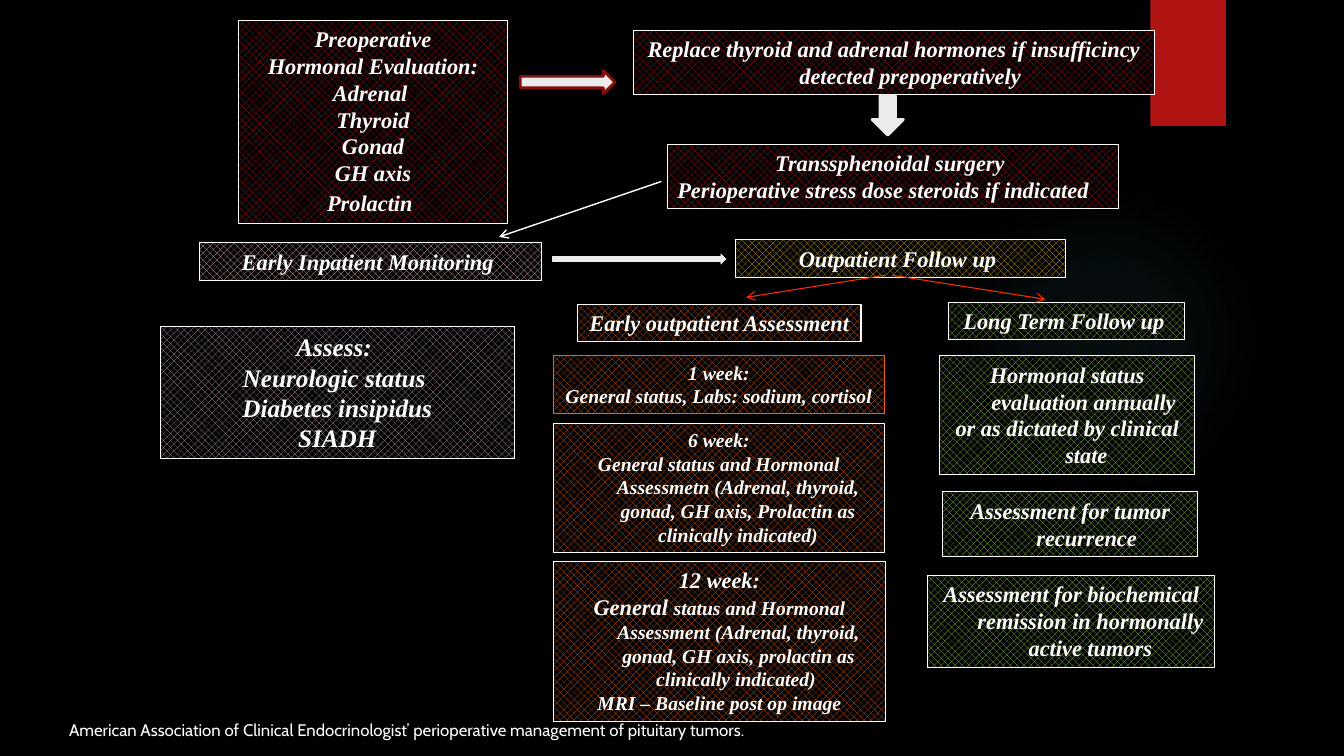
from lxml import etree
from pptx import Presentation
from pptx.dml.color import RGBColor
from pptx.enum.dml import MSO_PATTERN
from pptx.enum.shapes import MSO_CONNECTOR, MSO_SHAPE
from pptx.enum.text import MSO_ANCHOR, PP_ALIGN
from pptx.oxml import parse_xml
from pptx.oxml.ns import nsdecls, qn
from pptx.util import Inches, Pt

BLACK = RGBColor(0x00, 0x00, 0x00)
WHITE = RGBColor(0xFF, 0xFF, 0xFF)
RED = RGBColor(0xB0, 0x15, 0x13)
DARK_RED = RGBColor(0x84, 0x10, 0x0E)
BRIGHT_RED = RGBColor(0xFF, 0x2E, 0x00)
PALE_GRAY = RGBColor(0xEB, 0xEB, 0xEB)
PINK = RGBColor(0xF9, 0xC7, 0xC6)
GOLD = RGBColor(0xE6, 0xB7, 0x29)
ORANGE = RGBColor(0xEA, 0x63, 0x12)
GREEN = RGBColor(0x92, 0xD0, 0x50)
MAUVE = RGBColor(0xC5, 0x9E, 0xC3)

RECT, OVAL = MSO_SHAPE.RECTANGLE, MSO_SHAPE.OVAL
RIGHT_ARROW, DOWN_ARROW = MSO_SHAPE.RIGHT_ARROW, MSO_SHAPE.DOWN_ARROW
HATCH = MSO_PATTERN.PERCENT_50
STRAIGHT = MSO_CONNECTOR.STRAIGHT
CENTER, JUSTIFY, LEFT = PP_ALIGN.CENTER, PP_ALIGN.JUSTIFY, PP_ALIGN.LEFT
TOP = MSO_ANCHOR.TOP

SERIF, SANS = "Times New Roman", "Cabin"
HANGING = Inches(0.38)

# Each box: position, hatch colour, size, paragraphs.
# A paragraph is a string or a list of (text, size) runs.
STEPS = [
    ((2.37, 0.2, 2.66, 2.02), RED, 16,
     ["Preoperative", "Hormonal Evaluation:", "Adrenal ", "Thyroid", "Gonad",
      "GH axis", [("Prolactin", 16), (" ", 18)]]),
    ((6.28, 0.3, 5.17, 0.64), RED, 16,
     ["Replace thyroid and adrenal hormones if insufficincy "
      "detected prepoperatively "]),
    ((7.29, 2.38, 3.28, 0.37), GOLD, 16, ["Outpatient Follow up "]),
    ((1.98, 2.41, 3.39, 0.37), PINK, 16, ["Early Inpatient Monitoring "]),
    ((1.59, 3.24, 3.51, 1.31), MAUVE, 18,
     ["Assess: ", "Neurologic status ", "Diabetes insipidus", "SIADH"]),
    # Early outpatient column
    ((5.73, 3.02, 2.81, 0.37), ORANGE, 16, ["Early outpatient Assessment"]),
    ((5.49, 4.2, 3.28, 1.28), ORANGE, 14,
     ["6 week:",
      "General status and Hormonal Assessmetn (Adrenal, thyroid, gonad, "
      "GH axis, Prolactin as clinically indicated)"]),
    ((5.49, 5.57, 3.29, 1.59), ORANGE, 14,
     [[("12 week:", 16)],
      [("General ", 16),
       ("status and Hormonal Assessment (Adrenal, thyroid, gonad, GH axis, "
        "prolactin as clinically indicated) ", 14)],
      "MRI – Baseline post op image"]),
    # Long term column
    ((9.41, 3, 2.34, 0.37), GREEN, 16, ["Long Term Follow up "]),
    ((9.32, 3.53, 2.53, 1.18), GREEN, 16,
     ["Hormonal status evaluation annually ",
      "or as dictated by clinical state"]),
    ((9.35, 4.88, 2.53, 0.64), GREEN, 16, ["Assessment for tumor recurrence "]),
    ((9.2, 5.71, 2.85, 0.91), GREEN, 16,
     ["Assessment for biochemical remission in hormonally active tumors"]),
]


def write_text(shape, paragraphs, size, font=SERIF, strong=True, aligns=None):
    frame = shape.text_frame
    frame.word_wrap = True
    frame.vertical_anchor = TOP
    for index, content in enumerate(paragraphs):
        paragraph = frame.paragraphs[0] if index == 0 else frame.add_paragraph()
        paragraph.alignment = aligns[index] if aligns else CENTER
        properties = paragraph._p.get_or_add_pPr()
        properties.set("marL", str(HANGING))
        properties.set("indent", str(-HANGING))
        runs = [(content, size)] if isinstance(content, str) else content
        for text, run_size in runs:
            run = paragraph.add_run()
            run.text = text
            run.font.name = font
            run.font.size = Pt(run_size)
            run.font.bold = run.font.italic = strong
            run.font.color.rgb = WHITE


def add_plain(slide, kind, position, fill=None, line=None, width=0.75):
    shape = slide.shapes.add_shape(kind, *map(Inches, position))
    shape.shadow.inherit = False
    if fill is not None:
        shape.fill.solid()
        shape.fill.fore_color.rgb = fill
    if line is None:
        shape.line.fill.background()
    else:
        shape.line.color.rgb = line
        shape.line.width = Pt(width)
    return shape


def add_step(slide, position, color, size, paragraphs, line=WHITE, aligns=None):
    box = add_plain(slide, RECT, position, line=line)
    box.fill.patterned()
    box.fill.pattern = HATCH
    box.fill.fore_color.rgb = color
    box.fill.back_color.rgb = BLACK
    write_text(box, paragraphs, size, aligns=aligns)


def add_glow(slide, position):
    glow = add_plain(slide, OVAL, position)
    stops = "".join(
        f'<a:gs pos="{place}000"><a:srgbClr val="50B9C1">'
        f'<a:alpha val="{alpha}000"/></a:srgbClr></a:gs>'
        for place, alpha in ((0, 7), (36, 6), (69, 0)))
    gradient = parse_xml(
        f'<a:gradFill {nsdecls("a")}><a:gsLst>{stops}</a:gsLst>'
        '<a:path path="circle"><a:fillToRect l="50000" t="50000" r="50000" '
        'b="50000"/></a:path></a:gradFill>')
    glow._element.spPr.find(qn("a:prstGeom")).addnext(gradient)


def add_thin_arrow(slide, start, end, color, width):
    arrow = slide.shapes.add_connector(STRAIGHT, *map(Inches, start + end))
    arrow.line.color.rgb = color
    arrow.line.width = Pt(width)
    etree.SubElement(arrow.line._get_or_add_ln(), qn("a:tailEnd"), type="arrow")
    etree.SubElement(arrow._element.spPr, qn("a:effectLst"))


def main():
    deck = Presentation()
    deck.slide_width, deck.slide_height = Inches(13.33), Inches(7.5)
    slide = deck.slides.add_slide(deck.slide_layouts[6])
    slide.background.fill.solid()
    slide.background.fill.fore_color.rgb = BLACK

    # Backdrop
    add_glow(slide, (9.41, 1.83, 3.08, 3.08))
    add_plain(slide, RECT, (11.41, 0, 0.75, 1.25), RED)

    # Care steps
    for step in STEPS:
        add_step(slide, *step)
    add_step(slide, (6.62, 1.43, 4.47, 0.64), RED, 16,
             ["Transsphenoidal surgery ",
              "Perioperative stress dose steroids if indicated"],
             aligns=(CENTER, JUSTIFY))
    add_step(slide, (5.49, 3.53, 3.28, 0.57), ORANGE, 14,
             ["1 week:", "General status, Labs: sodium, cortisol "],
             line=ORANGE)

    # Block arrows
    add_plain(slide, RIGHT_ARROW, (5.16, 0.7, 0.94, 0.23), PALE_GRAY, DARK_RED, 2)
    add_plain(slide, DOWN_ARROW, (8.65, 0.95, 0.31, 0.39), PALE_GRAY, PALE_GRAY, 2)
    add_plain(slide, RIGHT_ARROW, (5.48, 2.52, 1.72, 0.1), PALE_GRAY, PALE_GRAY, 0.5)

    # Thin arrows
    add_thin_arrow(slide, (6.56, 1.8), (4.95, 2.35), WHITE, 1)
    add_thin_arrow(slide, (8.78, 2.73), (7.4, 2.95), BRIGHT_RED, 0.75)
    add_thin_arrow(slide, (8.85, 2.73), (10.37, 2.97), BRIGHT_RED, 0.75)

    # Source line
    source = slide.shapes.add_textbox(*map(Inches, (0.55, 7.09, 12.47, 0.3)))
    write_text(source, [" American Association of Clinical Endocrinologist’ "
                        "perioperative management of pituitary tumors."],
               12, font=SANS, strong=False, aligns=(LEFT,))

    deck.save("out.pptx")


if __name__ == "__main__":
    main()
